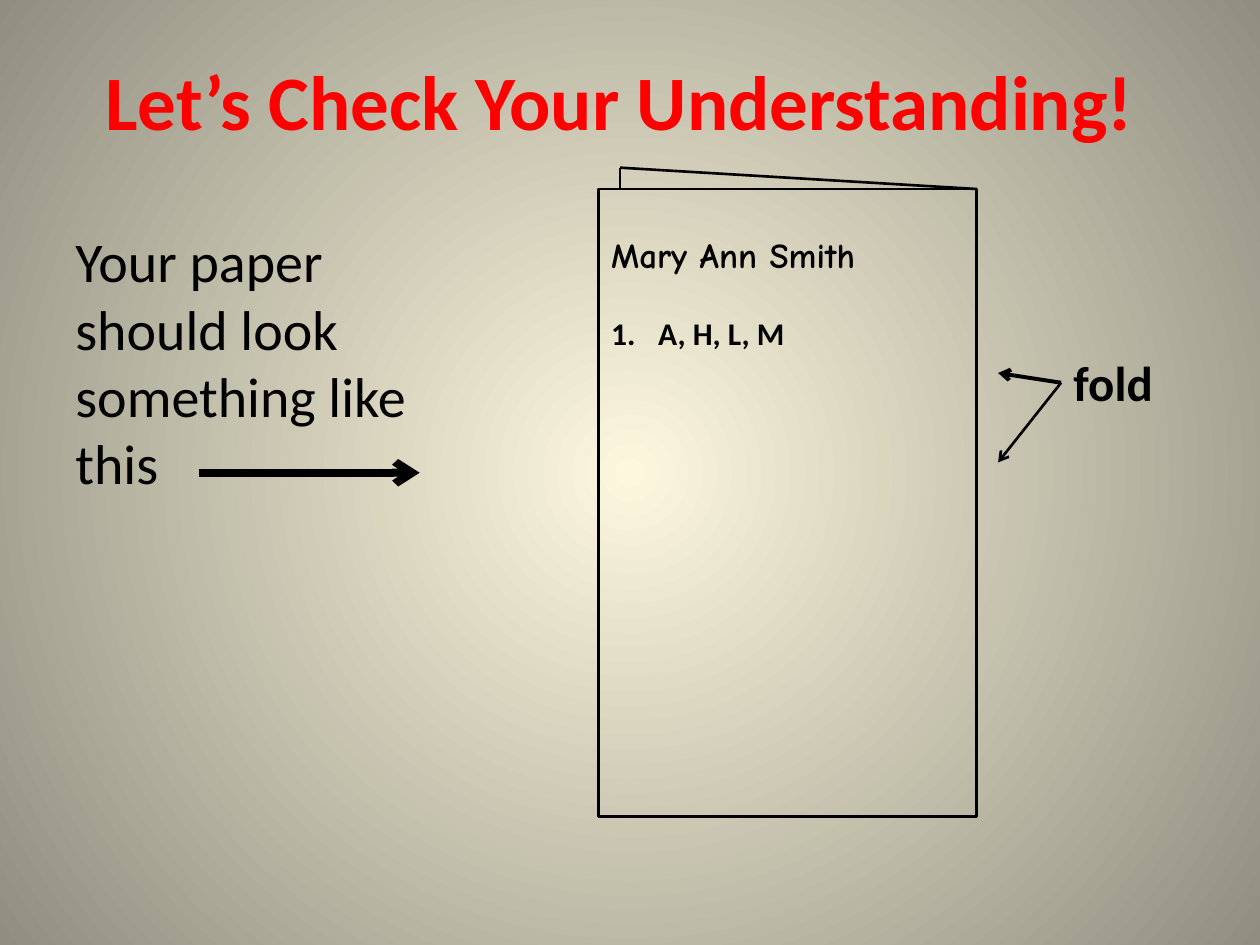
from dataclasses import dataclass

from lxml.etree import SubElement
from pptx import Presentation
from pptx.dml.color import RGBColor as Color
from pptx.enum.shapes import MSO_CONNECTOR as Connector, MSO_SHAPE as Shape
from pptx.enum.text import MSO_ANCHOR as Anchor, PP_ALIGN as Align
from pptx.oxml.ns import qn
from pptx.util import Cm, Pt


@dataclass(frozen=True)
class Theme:
    glow: Color = Color.from_string("FCF7DD")
    edge: Color = Color.from_string("918E81")
    ink: Color = Color.from_string("000000")
    accent: Color = Color.from_string("FF0000")
    font: str = "Calibri"
    handwriting: str = "Comic Neue"
    title: int = 44
    body: int = 32
    label: int = 28
    name: int = 20
    answer: int = 18
    thin: float = 1.5
    medium: float = 2.25
    thick: float = 4.5


class Board:
    def __init__(self, slide, theme):
        self.slide = slide
        self.theme = theme

    def background(self):
        fill = self.slide.background.fill
        fill.gradient()
        colors = (self.theme.glow, self.theme.edge)
        for stop, position, color in zip(fill.gradient_stops, (0, 1), colors):
            stop.position = position
            stop.color.rgb = color
        linear = self.slide.element.find(".//" + qn("a:lin"))
        gradient = linear.getparent()
        gradient.remove(linear)
        circle = SubElement(gradient, qn("a:path"), path="circle")
        sides = dict.fromkeys("ltrb", "50000")
        SubElement(circle, qn("a:fillToRect"), **sides)

    def style_text(self, paragraph, text, size, color=None, bold=False, font=None):
        paragraph.text = text
        paragraph.font.name = font or self.theme.font
        paragraph.font.size = Pt(size)
        paragraph.font.bold = bold
        paragraph.font.color.rgb = color or self.theme.ink

    def text(self, box, text, size, color=None, bold=False,
             align=Align.LEFT, anchor=Anchor.TOP):
        shape = self.slide.shapes.add_textbox(*map(Cm, box))
        frame = shape.text_frame
        frame.word_wrap = True
        frame.vertical_anchor = anchor
        paragraph = frame.paragraphs[0]
        paragraph.alignment = align
        self.style_text(paragraph, text, size, color, bold)
        return shape

    def paper(self, box, name, answer):
        theme = self.theme
        shape = self.slide.shapes.add_shape(Shape.RECTANGLE, *map(Cm, box))
        shape.shadow.inherit = False
        shape.fill.background()
        shape.line.color.rgb = theme.ink
        shape.line.width = Pt(theme.thin)
        frame = shape.text_frame
        frame.word_wrap = True
        frame.vertical_anchor = Anchor.TOP
        frame.margin_top = Cm(0.9)
        heading, item = frame.paragraphs[0], frame.add_paragraph()
        self.style_text(heading, name, theme.name, bold=True, font=theme.handwriting)
        self.style_text(item, answer, theme.answer, bold=True)
        heading.alignment = item.alignment = Align.LEFT
        item.space_before = Pt(22)
        properties = item._p.get_or_add_pPr()
        indent = Cm(0.95)
        properties.set("marL", str(indent))
        properties.set("indent", str(-indent))
        number = SubElement(properties, qn("a:buAutoNum"), type="arabicPeriod")
        properties.find(qn("a:defRPr")).addprevious(number)

    def line(self, start, end, width, arrow=False, source=None):
        connector = self.slide.shapes.add_connector(
            Connector.STRAIGHT, *map(Cm, start + end))
        if source is not None:
            connector.begin_connect(source, 1)
        connector.line.color.rgb = self.theme.ink
        connector.line.width = Pt(width)
        if arrow:
            SubElement(connector.line._get_or_add_ln(), qn("a:tailEnd"), type="arrow")
        SubElement(connector._element.spPr, qn("a:effectLst"))


def main():
    presentation = Presentation()
    presentation.slide_width, presentation.slide_height = Cm(25.4), Cm(19.05)
    theme = Theme()
    board = Board(presentation.slides.add_slide(presentation.slide_layouts[6]), theme)
    board.background()
    board.text((1.07, 0.43, 22.86, 3.18), "Let’s Check Your Understanding!",
               theme.title, theme.accent, True, Align.CENTER, Anchor.MIDDLE)
    board.text((1.27, 4.45, 8.26, 12.57),
               "Your paper should look something like this", theme.body)
    board.line((4.01, 9.53), (8.46, 9.53), theme.thick, arrow=True)

    left, top, width, height = 12.07, 3.81, 7.62, 12.65
    board.paper((left, top, width, height), "Mary Ann Smith", "A, H, L, M")
    flap = (12.5, 3.38)
    for end in ((left + width, top), (flap[0], top)):
        board.line(flap, end, theme.thin)

    fold = board.text((21.39, 6.99, 2.54, 1.45), "fold", theme.label, bold=True)
    for tip, weight in ((7.52, theme.medium), (9.32, theme.thin)):
        board.line((21.39, 7.72), (20.12, tip), weight, arrow=True, source=fold)
    presentation.save("out.pptx")


if __name__ == "__main__":
    main()
